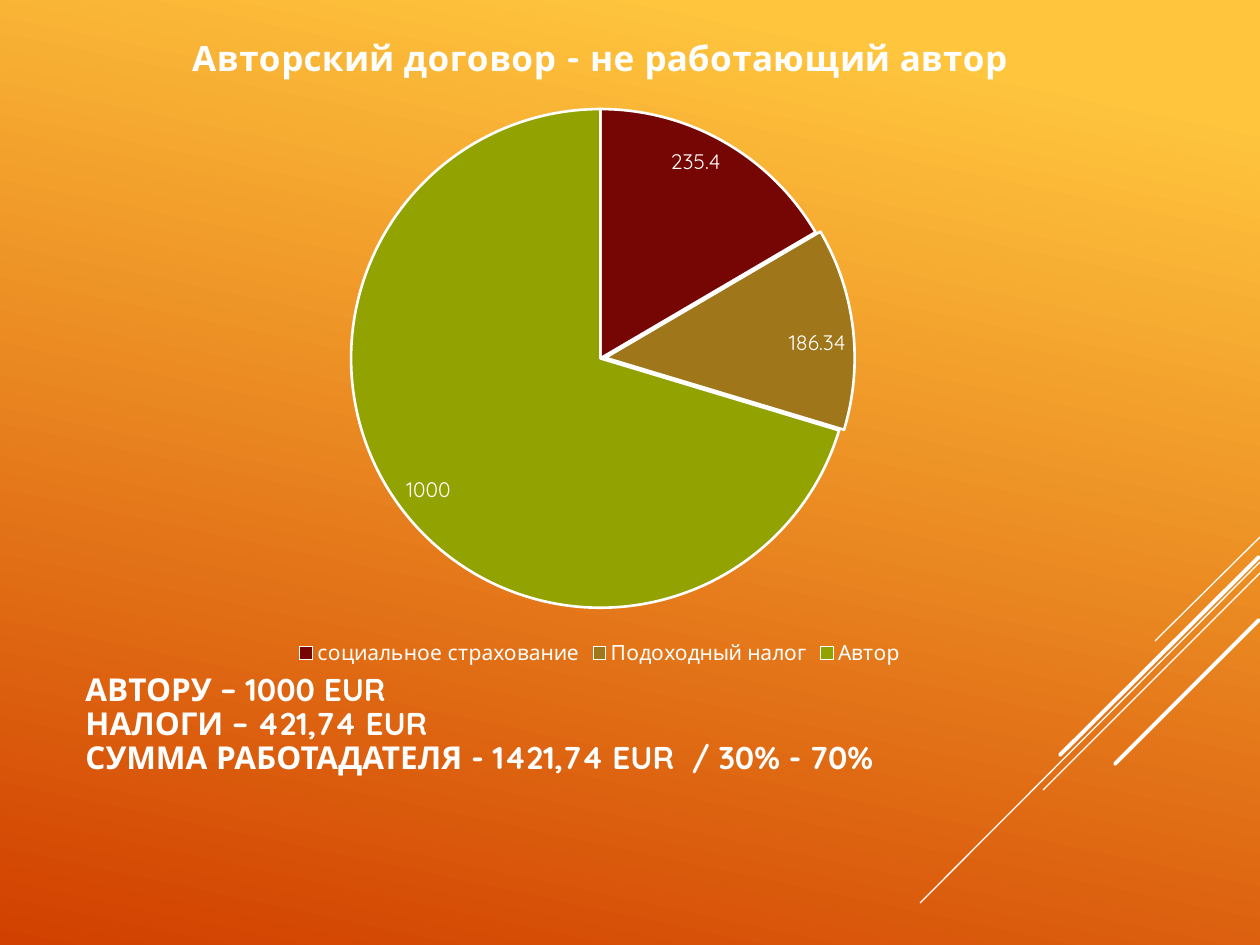
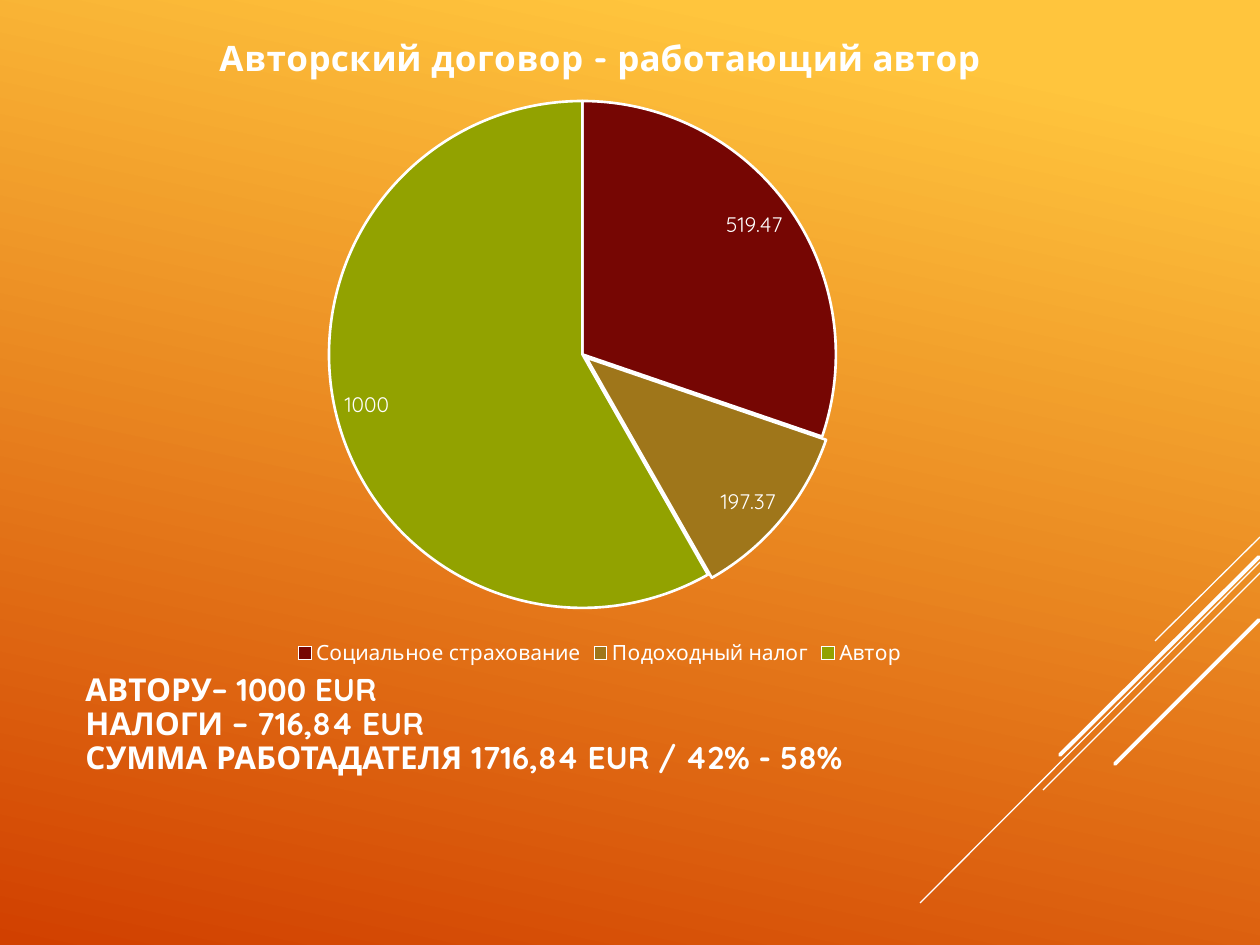
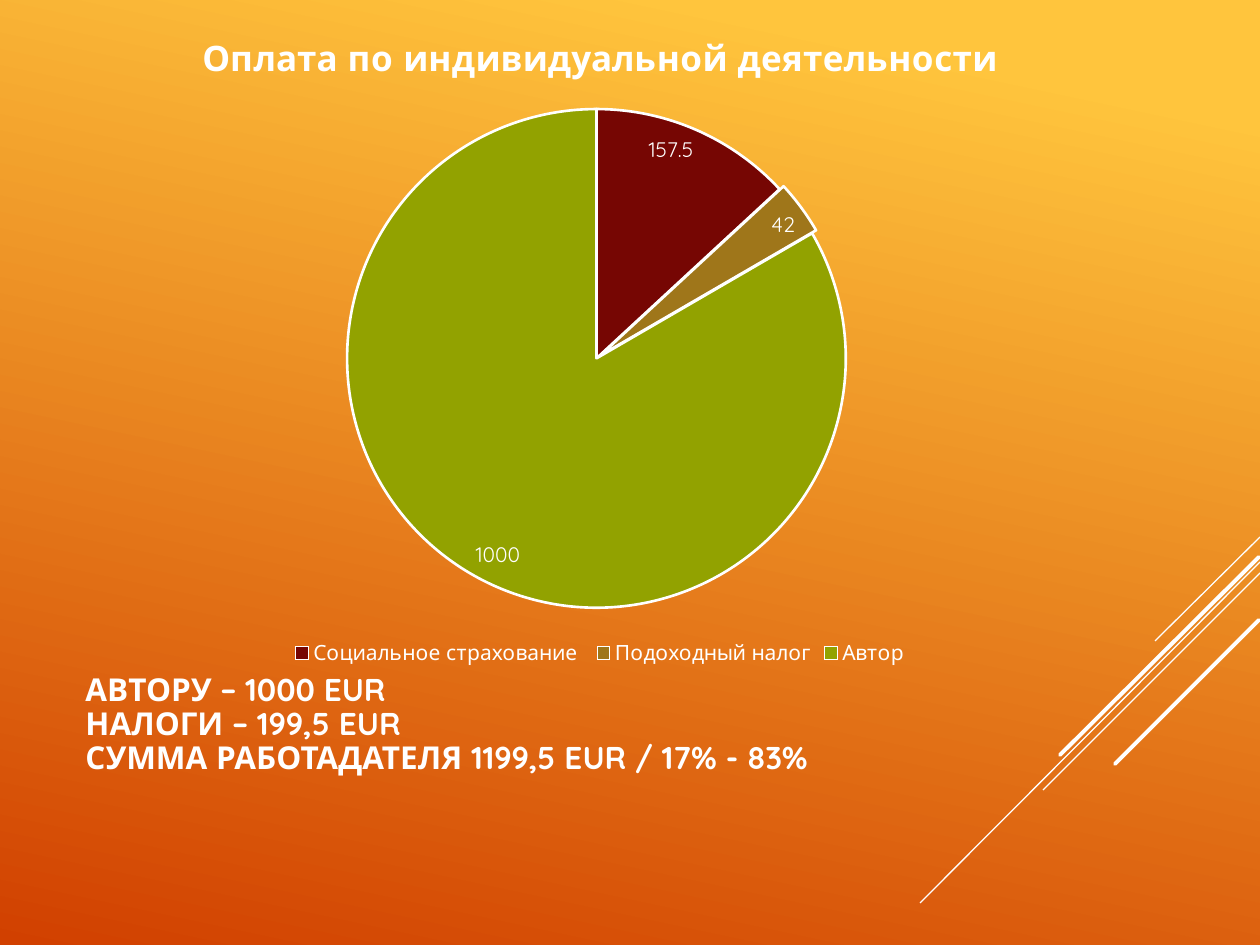
from dataclasses import dataclass

from lxml.etree import SubElement
from pptx import Presentation
from pptx.chart.data import CategoryChartData
from pptx.dml.color import RGBColor as Rgb
from pptx.enum.chart import XL_CHART_TYPE as ChartType
from pptx.enum.chart import XL_LABEL_POSITION as LabelPosition
from pptx.enum.chart import XL_LEGEND_POSITION as LegendPosition
from pptx.enum.shapes import MSO_CONNECTOR as Connector
from pptx.enum.text import MSO_ANCHOR as Anchor
from pptx.oxml.ns import qn
from pptx.util import Emu, Pt

EMU_PER_PX = 914400 / 126
SLIDE_SIZE = (1260, 945)
CHART_BOX = (15, 6, 1170, 665)
SUMMARY_BOX = (73, 620, 903, 211)
BLANK_LAYOUT = 6
EXPLODED_SLICE = 1
EXPLOSION = 2
THIN, THICK = 0.75, 2.25

RAYS = [
    (1260, 537, 1155, 641, THIN),
    (1260, 562, 920, 903, THIN),
    (1260, 573, 1043, 790, THIN),
    (1259, 557, 1060, 755, THICK),
    (1259, 620, 1115, 764, THICK),
]

PAYMENTS = [
    {
        "title": "Авторский договор - не работающий автор",
        "social": "социальное страхование",
        "values": (235.4, 186.34, 1000),
        "pie": (356, 114, 489),
        "summary": ["АВТОРУ – 1000 EUR", "НАЛОГИ – 421,74 EUR",
                    "СУММА РАБОТАДАТЕЛЯ - 1421,74 EUR  / 30% - 70%"],
    },
    {
        "title": "Авторский договор - работающий автор",
        "social": "Социальное страхование",
        "values": (519.47, 197.37, 1000),
        "pie": (334, 106, 497),
        "summary": ["АВТОРУ– 1000 EUR", "НАЛОГИ – 716,84 EUR",
                    "СУММА РАБОТАДАТЕЛЯ 1716,84 EUR / 42% - 58%"],
    },
    {
        "title": "Оплата по индивидуальной деятельности",
        "social": "Социальное страхование ",
        "values": (157.5, 42, 1000),
        "pie": (352, 114, 489),
        "summary": ["АВТОРУ – 1000 EUR", "НАЛОГИ – 199,5 EUR",
                    "СУММА РАБОТАДАТЕЛЯ 1199,5 EUR / 17% - 83%"],
    },
]


@dataclass(frozen=True)
class Theme:
    """Colours, font and type sizes of the deck."""

    font: str = "Quicksand"
    white: str = "FFFFFF"
    glow: str = "FFC53D"
    ember: str = "D14000"
    slices: tuple = ("760603", "9F761A", "92A200")
    title: int = 20
    summary: int = 18
    label: int = 12
    chart: int = 10
    slice_line: float = 1.5


def px(length):
    """Turn pixels into EMU."""
    return Emu(round(length * EMU_PER_PX))


def apply(target, values):
    """Set each named attribute on the target."""
    for name, value in values.items():
        setattr(target, name, value)


class Deck:
    """Holds the style and the current slide."""

    def __init__(self, theme):
        """Start an empty presentation."""
        self.theme = theme
        self.presentation = Presentation()
        width, height = map(px, SLIDE_SIZE)
        apply(self.presentation, {"slide_width": width, "slide_height": height})
        self.slide = None

    def style(self, font, size, bold=False):
        """Give a font the deck's face and colour."""
        apply(font, {"name": self.theme.font, "size": Pt(size), "bold": bold})
        font.color.rgb = Rgb.from_string(self.theme.white)

    def outline(self, line, width):
        """Draw a white line of the given width."""
        line.color.rgb = Rgb.from_string(self.theme.white)
        line.width = Pt(width)

    def add_slide(self):
        """Add a slide with the gradient and the rays."""
        layout = self.presentation.slide_layouts[BLANK_LAYOUT]
        self.slide = self.presentation.slides.add_slide(layout)
        fill = self.slide.background.fill
        fill.gradient()
        fill.gradient_angle = 360 - 102
        stops = ((0.1, self.theme.glow), (1, self.theme.ember))
        for stop, (position, colour) in zip(fill.gradient_stops, stops):
            stop.position = position
            stop.color.rgb = Rgb.from_string(colour)
        for ray in RAYS:
            self.ray(*ray)

    def ray(self, left, top, right, bottom, width):
        """Draw one diagonal line."""
        ends = map(px, (left, top, right, bottom))
        connector = self.slide.shapes.add_connector(Connector.STRAIGHT, *ends)
        self.outline(connector.line, width)
        properties = connector._element.spPr
        if width == THICK:
            properties.find(qn("a:ln")).set("cap", "rnd")
        SubElement(properties, qn("a:effectLst"))

    def summary(self, lines):
        """Write the totals below the chart."""
        shape = self.slide.shapes.add_textbox(*map(px, SUMMARY_BOX))
        frame = shape.text_frame
        apply(frame, {"word_wrap": True, "vertical_anchor": Anchor.MIDDLE})
        paragraph = frame.paragraphs[0]
        paragraph.text = "\v".join(lines)
        paragraph.line_spacing = 0.9
        for run in paragraph.runs:
            self.style(run.font, self.theme.summary, bold=True)

    def pie(self, title, categories, values, circle):
        """Add the pie chart with its title, legend and labels."""
        data = CategoryChartData()
        data.categories = categories
        data.add_series(title, values)
        frame = self.slide.shapes.add_chart(
            ChartType.PIE, *map(px, CHART_BOX), data)
        chart = frame.chart
        self.style(chart.font, self.theme.chart)
        text = chart.chart_title.text_frame
        text.text = title
        self.style(text.paragraphs[0].runs[0].font, self.theme.title, bold=True)
        chart.has_legend = True
        apply(chart.legend, {"position": LegendPosition.BOTTOM,
                             "include_in_layout": False})
        self.style(chart.legend.font, self.theme.label)
        plot = chart.plots[0]
        apply(plot, {"vary_by_categories": True, "has_data_labels": True})
        apply(plot.data_labels, {"show_value": True, "show_percentage": False,
                                 "position": LabelPosition.INSIDE_END})
        self.style(plot.data_labels.font, self.theme.label)
        for index, colour in enumerate(self.theme.slices):
            point = plot.series[0].points[index]
            point.format.fill.solid()
            point.format.fill.fore_color.rgb = Rgb.from_string(colour)
            self.outline(point.format.line, self.theme.slice_line)
        self.explode(chart)
        self.place_circle(chart, *circle)

    def explode(self, chart):
        """Pull the tax slice slightly out of the pie."""
        point = list(chart.element.iter(qn("c:dPt")))[EXPLODED_SLICE]
        explosion = SubElement(point, qn("c:explosion"))
        explosion.set("val", str(EXPLOSION))
        point.find(qn("c:spPr")).addprevious(explosion)

    def place_circle(self, chart, left, top, diameter):
        """Fix the pie inside the chart frame."""
        area = next(chart.element.iter(qn("c:plotArea")))
        for layout in area.findall(qn("c:layout")):
            area.remove(layout)
        layout = SubElement(area, qn("c:layout"))
        area.insert(0, layout)
        manual = SubElement(layout, qn("c:manualLayout"))
        chart_left, chart_top, width, height = CHART_BOX
        margin = diameter * EXPLOSION / 200
        side = diameter + 2 * margin
        settings = {
            "layoutTarget": "inner", "xMode": "edge", "yMode": "edge",
            "x": (left - margin - chart_left) / width,
            "y": (top - margin - chart_top) / height,
            "w": side / width, "h": side / height,
        }
        for name, value in settings.items():
            SubElement(manual, qn(f"c:{name}")).set("val", str(value))


def main():
    """Build the three payment slides."""
    deck = Deck(Theme())
    for payment in PAYMENTS:
        deck.add_slide()
        deck.summary(payment["summary"])
        categories = (payment["social"], "Подоходный налог", "Автор")
        deck.pie(payment["title"], categories, payment["values"], payment["pie"])
    deck.presentation.save("out.pptx")


if __name__ == "__main__":
    main()
